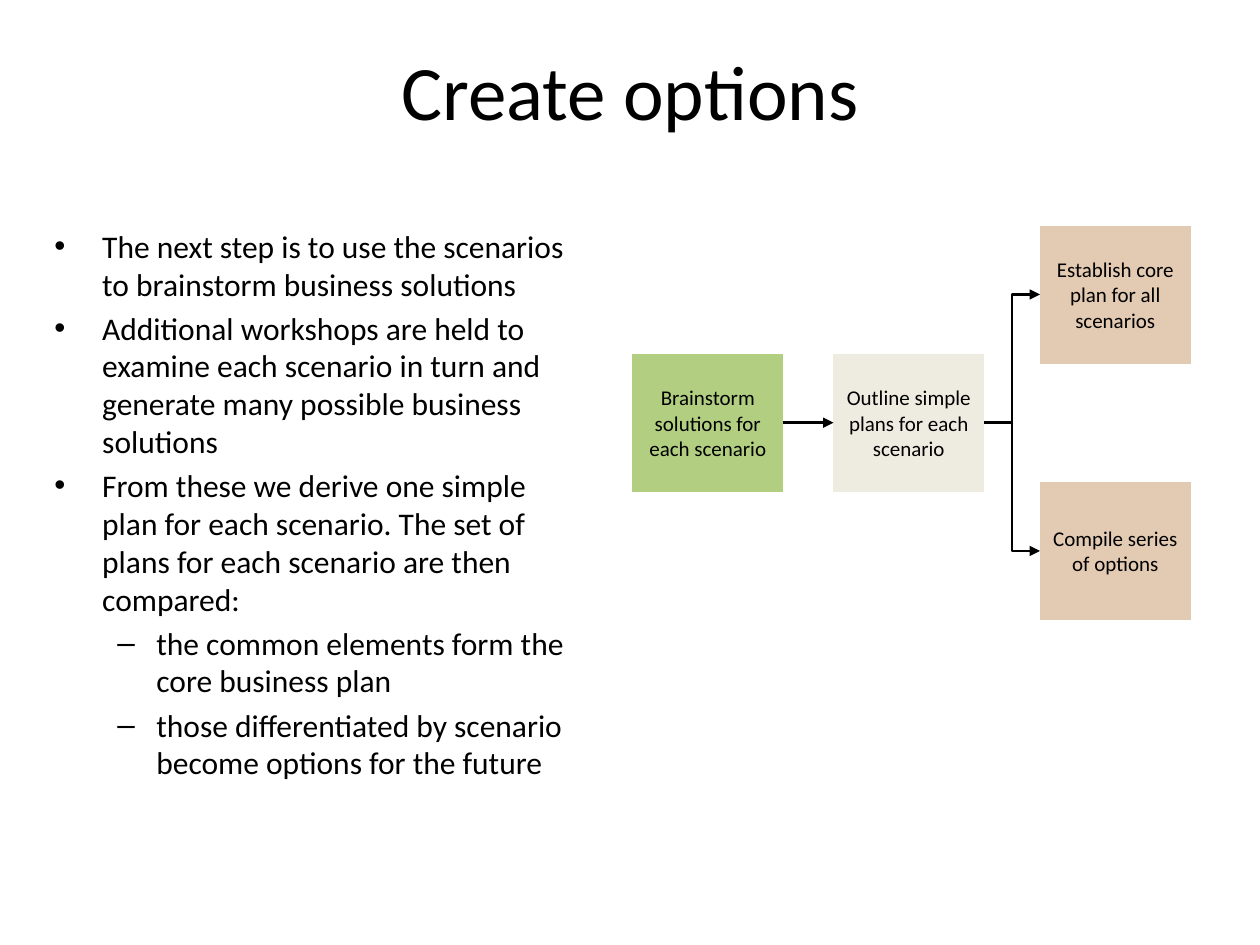
from dataclasses import dataclass

from lxml import etree
from pptx import Presentation
from pptx.dml.color import RGBColor
from pptx.enum.shapes import MSO_CONNECTOR, MSO_SHAPE
from pptx.enum.text import MSO_ANCHOR, PP_ALIGN
from pptx.oxml.ns import qn
from pptx.util import Inches, Pt

PROCESS = MSO_SHAPE.FLOWCHART_PROCESS
STRAIGHT, ELBOW = MSO_CONNECTOR.STRAIGHT, MSO_CONNECTOR.ELBOW
CENTER, LEFT = PP_ALIGN.CENTER, PP_ALIGN.LEFT
MIDDLE, TOP = MSO_ANCHOR.MIDDLE, MSO_ANCHOR.TOP
LEFT_SITE, RIGHT_SITE = 1, 3
TITLE_ONLY = 5
UNIT = Inches(1) // 12  # the slide is a grid of 120 columns by 90 rows


@dataclass(frozen=True)
class Theme:
    font: str = "Calibri"
    ink: RGBColor = RGBColor.from_string("000000")
    green: RGBColor = RGBColor.from_string("B2CF81")
    cream: RGBColor = RGBColor.from_string("EEECE1")
    tan: RGBColor = RGBColor.from_string("E3CAB3")
    title: Pt = Pt(44)
    body: Pt = Pt(18)
    node: Pt = Pt(12)
    line: Pt = Pt(1.5)


THEME = Theme()

# Level: bullet, left margin and hanging indent
BULLETS = [("•", Inches(0.38), Inches(-0.38)), ("–", Inches(0.81), Inches(-0.31))]
POINTS = [
    (0, "The next step is to use the scenarios to brainstorm business solutions"),
    (0, "Additional workshops are held to examine each scenario in turn and "
        "generate many possible business solutions"),
    (0, "From these we derive one simple plan for each scenario. The set of "
        "plans for each scenario are then compared:"),
    (1, "the common elements form the core business plan"),
    (1, "those differentiated by scenario become options for the future"),
]

# Name: column, row, fill, text
NODES = {
    "brainstorm": (0, 1, THEME.green, "Brainstorm solutions for each scenario"),
    "outline": (1, 1, THEME.cream, "Outline simple plans for each scenario"),
    "options": (2, 2, THEME.tan, "Compile series of options"),
    "core": (2, 0, THEME.tan, "Establish core plan for all scenarios"),
}
LINKS = [
    ("brainstorm", "outline", STRAIGHT),
    ("outline", "options", ELBOW),
    ("outline", "core", ELBOW),
]
COLUMN_STARTS = (0, 0.36, 0.73)  # shares of the diagram width
NODE_WIDTH, NODE_HEIGHT = 0.27, 0.35  # shares of the diagram


def grid(*cells):
    return [round(n * UNIT) for n in cells]


def place(sp, box):
    for name, value in zip(("left", "top", "width", "height"), box):
        setattr(sp, name, value)


def write(p, text, size, align):
    p.alignment = align
    r = p.add_run()
    r.text = text
    style = {"name": THEME.font, "size": size, "bold": False}
    for name, value in style.items():
        setattr(r.font, name, value)
    r.font.color.rgb = THEME.ink


def set_frame(tf, anchor):
    frame = {"word_wrap": True, "vertical_anchor": anchor,
             "margin_left": Inches(0.1), "margin_right": Inches(0.1),
             "margin_top": Inches(0.05), "margin_bottom": Inches(0.05)}
    for name, value in frame.items():
        setattr(tf, name, value)


def add_title(s, box):
    title = s.shapes.title
    place(title, box)
    set_frame(title.text_frame, MIDDLE)
    write(title.text_frame.paragraphs[0], "Create options", THEME.title, CENTER)


def add_points(s, box):
    tf = s.shapes.add_textbox(*box).text_frame
    set_frame(tf, TOP)
    for i, (level, text) in enumerate(POINTS):
        p = tf.add_paragraph() if i else tf.paragraphs[0]
        write(p, text, THEME.body, LEFT)
        p.level = level
        p.space_before = round(THEME.body * 0.2)
        # Bullet and hanging indent
        char, margin, indent = BULLETS[level]
        pPr = p._p.get_or_add_pPr()
        pPr.set("marL", str(margin))
        pPr.set("indent", str(indent))
        etree.SubElement(pPr, qn("a:buFont")).set("typeface", "Arial")
        etree.SubElement(pPr, qn("a:buChar")).set("char", char)


def add_node(s, box, fill, text):
    sp = s.shapes.add_shape(PROCESS, *box)
    sp.shadow.inherit = False
    sp.fill.solid()
    sp.fill.fore_color.rgb = fill
    sp.line.fill.background()
    set_frame(sp.text_frame, MIDDLE)
    write(sp.text_frame.paragraphs[0], text, THEME.node, CENTER)
    return sp


def add_arrow(s, start, end, kind):
    cxn = s.shapes.add_connector(kind, 0, 0, 0, 0)
    cxn.begin_connect(start, RIGHT_SITE)
    cxn.end_connect(end, LEFT_SITE)
    cxn.line.color.rgb = THEME.ink
    cxn.line.width = THEME.line
    # Arrowhead, and no shadow
    etree.SubElement(cxn.line._get_or_add_ln(), qn("a:tailEnd")).set("type", "triangle")
    etree.SubElement(cxn._element.spPr, qn("a:effectLst"))


def add_flow(s, box):
    x, y, w, h = box
    node_w, node_h = round(w * NODE_WIDTH), round(h * NODE_HEIGHT)
    row_step = (h - node_h) // 2
    nodes = {}
    for name, (col, row, fill, text) in NODES.items():
        left = x + round(w * COLUMN_STARTS[col])
        nodes[name] = add_node(s, (left, y + row * row_step, node_w, node_h), fill, text)
    for start, end, kind in LINKS:
        add_arrow(s, nodes[start], nodes[end], kind)


def main():
    prs = Presentation()
    prs.slide_width, prs.slide_height = grid(120, 90)
    s = prs.slides.add_slide(prs.slide_layouts[TITLE_ONLY])
    add_title(s, grid(6, 1, 108, 15))
    add_points(s, grid(4, 21, 53, 59.4))
    add_flow(s, grid(60.24, 21.48, 53.16, 37.56))
    prs.save("out.pptx")


if __name__ == "__main__":
    main()
